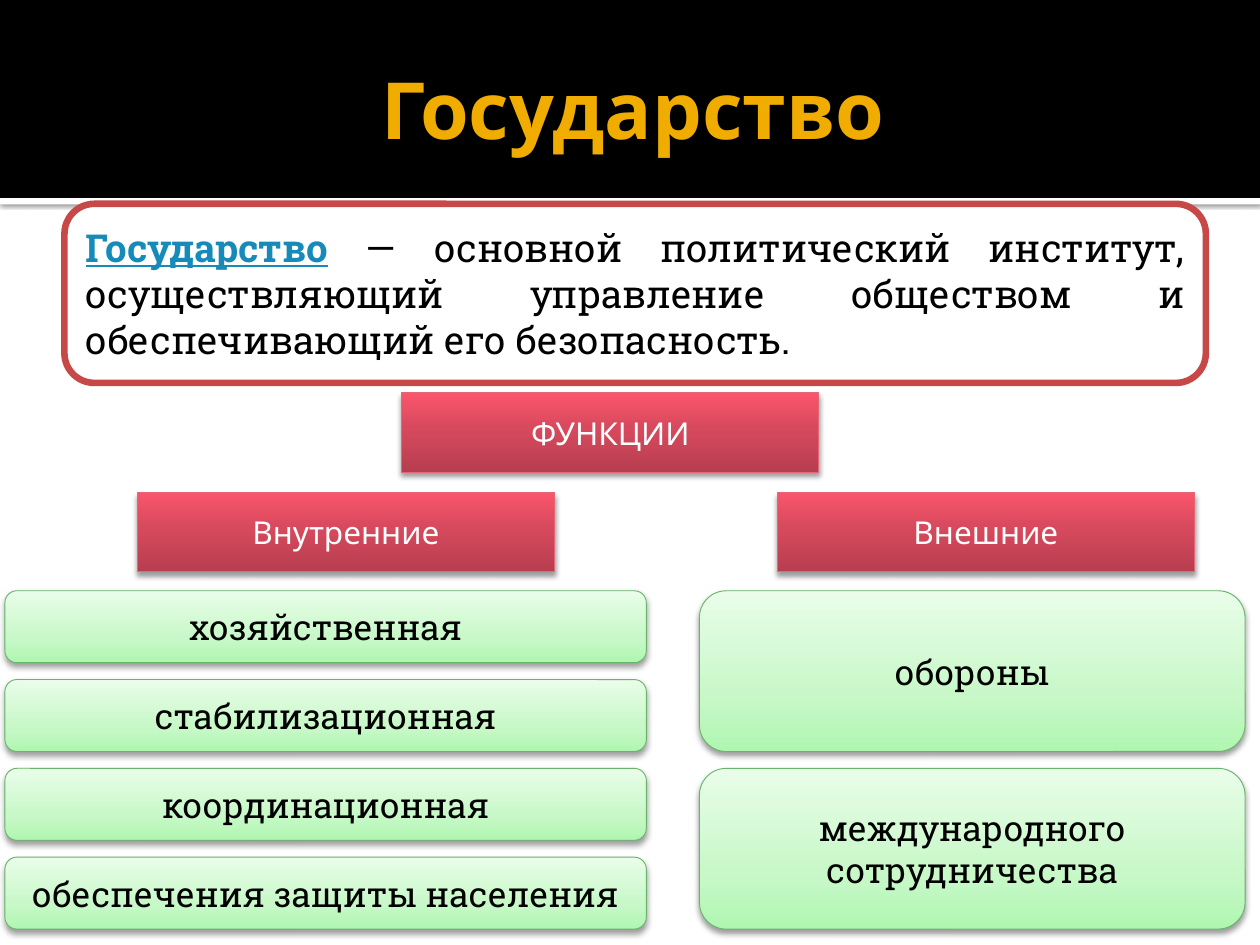
from lxml import etree
from pptx import Presentation, util as u
from pptx.dml.color import RGBColor
from pptx.enum import shapes, text
from pptx.oxml import ns

# Content
TITLE = "Государство"
DEFINITION = ("Государство", " — основной политический институт, осуществляющий "
              "управление обществом и обеспечивающий его безопасность.")
ROOT = "ФУНКЦИИ"
BRANCHES = [
    {"name": "Внутренние", "head_left": 2.77, "left": 0.1, "width": 12.93, "span": 1,
     "items": ["хозяйственная", "стабилизационная", "координационная",
               "обеспечения защиты населения"]},
    {"name": "Внешние", "head_left": 15.67, "left": 14.1, "width": 11, "span": 2,
     "items": ["обороны", "международного сотрудничества"]},
]

# Layout in centimetres
WIDTH, HEIGHT = 25.4, 19.05
BAND_HEIGHT = 3.99
HEAD_WIDTH, HEAD_HEIGHT = 8.41, 1.6
ROOT_TOP, HEAD_TOP = 7.92, 9.93
ITEM_TOP, ITEM_HEIGHT, ITEM_PITCH = 11.91, 1.45, 1.79

# Formats
RECT = shapes.MSO_SHAPE.RECTANGLE
ROUND = shapes.MSO_SHAPE.ROUNDED_RECTANGLE
CENTER, JUSTIFY = text.PP_ALIGN.CENTER, text.PP_ALIGN.JUSTIFY
TITLE_FONT = {"name": "Cabin", "size": u.Pt(45), "bold": True}
HEAD_FONT = {"name": "Cabin", "size": u.Pt(18)}
BODY_FONT = {"name": "Roboto Slab", "size": u.Pt(22)}
TERM_FONT = BODY_FONT | {"bold": True, "underline": True}
ITEM_FONT = {"name": "Roboto Slab", "size": u.Pt(20)}
HEAD_STYLE = {"kind": RECT, "fill": [(0, "B73E4F"), (55, "D7495D"), (100, "FA556C")],
              "line": ("E46778", 0.5), "shadow": (38, 3.1, 2)}
ITEM_STYLE = {"kind": ROUND, "fill": [(0, "B0F6B1"), (35, "C8F8C8"), (100, "E9FDE9")],
              "line": ("67B569", 0.5), "shadow": (38, 3.5, 2)}


def paint(target, color):
    target.rgb = RGBColor.from_string(color)


def set_gradient(shape, stops):
    shape.fill.gradient()
    shape.fill.gradient_angle = 90
    stop_list = shape.element.spPr.find(".//" + ns.qn("a:gsLst"))
    for old_stop in list(stop_list):
        stop_list.remove(old_stop)
    for position, color in stops:
        stop = etree.SubElement(stop_list, ns.qn("a:gs"), pos=str(position * 1000))
        etree.SubElement(stop, ns.qn("a:srgbClr"), val=color)


def set_shadow(shape, opacity, blur, distance):
    effects = shape.element.spPr.find(ns.qn("a:effectLst"))
    shadow = etree.SubElement(effects, ns.qn("a:outerShdw"), blurRad=str(u.Pt(blur)),
                              dist=str(u.Pt(distance)), dir="5400000", rotWithShape="0")
    color = etree.SubElement(shadow, ns.qn("a:srgbClr"), val="000000")
    etree.SubElement(color, ns.qn("a:alpha"), val=str(opacity * 1000))


def add_box(slide, box, kind, fill, line=None, shadow=None):
    shape = slide.shapes.add_shape(kind, *map(u.Cm, box))
    shape.shadow.inherit = False
    if isinstance(fill, list):
        set_gradient(shape, fill)
    else:
        shape.fill.solid()
        paint(shape.fill.fore_color, fill)
    if line:
        paint(shape.line.color, line[0])
        shape.line.width = u.Pt(line[1])
    else:
        shape.line.fill.background()
    if shadow:
        set_shadow(shape, *shadow)
    return shape


def write(shape, alignment, *runs):
    frame = shape.text_frame
    frame.word_wrap = True
    frame.vertical_anchor = text.MSO_ANCHOR.MIDDLE
    paragraph = frame.paragraphs[0]
    paragraph.alignment = alignment
    for words, font, color in runs:
        run = paragraph.add_run()
        run.text = words
        for attribute, value in font.items():
            setattr(run.font, attribute, value)
        paint(run.font.color, color)


def add_head(slide, words, left, top):
    head = add_box(slide, (left, top, HEAD_WIDTH, HEAD_HEIGHT), **HEAD_STYLE)
    write(head, CENTER, (words, HEAD_FONT, "FFFFFF"))


def main():
    presentation = Presentation()
    presentation.slide_width, presentation.slide_height = u.Cm(WIDTH), u.Cm(HEIGHT)
    slide = presentation.slides.add_slide(presentation.slide_layouts[5])

    # Title band
    add_box(slide, (0, BAND_HEIGHT, WIDTH, 0.13), RECT, "FFFFFF", shadow=(60, 2.5, 0.8))
    add_box(slide, (0, 0, WIDTH, BAND_HEIGHT), RECT, "000000")
    title = slide.shapes.title
    title_format = {"left": 1.27, "top": 0.43, "width": 22.86, "height": 3.48}
    for attribute, value in title_format.items():
        setattr(title, attribute, u.Cm(value))
    title.text_frame.margin_right = u.Cm(0.13)
    write(title, CENTER, (TITLE, TITLE_FONT, "F0AD00"))
    slide.shapes.element.append(title.element)  # in front of the band

    # Definition
    definition = add_box(slide, (1.3, 4.11, 23.01, 3.61), ROUND, "FFFFFF", ("C64847", 3.78))
    term, meaning = DEFINITION
    write(definition, JUSTIFY, (term, TERM_FONT, "168BBA"), (meaning, BODY_FONT, "000000"))

    # Functions
    add_head(slide, ROOT, 8.1, ROOT_TOP)
    for branch in BRANCHES:
        add_head(slide, branch["name"], branch["head_left"], HEAD_TOP)
        span = branch["span"]
        height = ITEM_HEIGHT + (span - 1) * ITEM_PITCH
        for index, words in enumerate(branch["items"]):
            top = ITEM_TOP + index * span * ITEM_PITCH
            item = add_box(slide, (branch["left"], top, branch["width"], height), **ITEM_STYLE)
            write(item, CENTER, (words, ITEM_FONT, "000000"))

    presentation.save("out.pptx")


if __name__ == "__main__":
    main()
